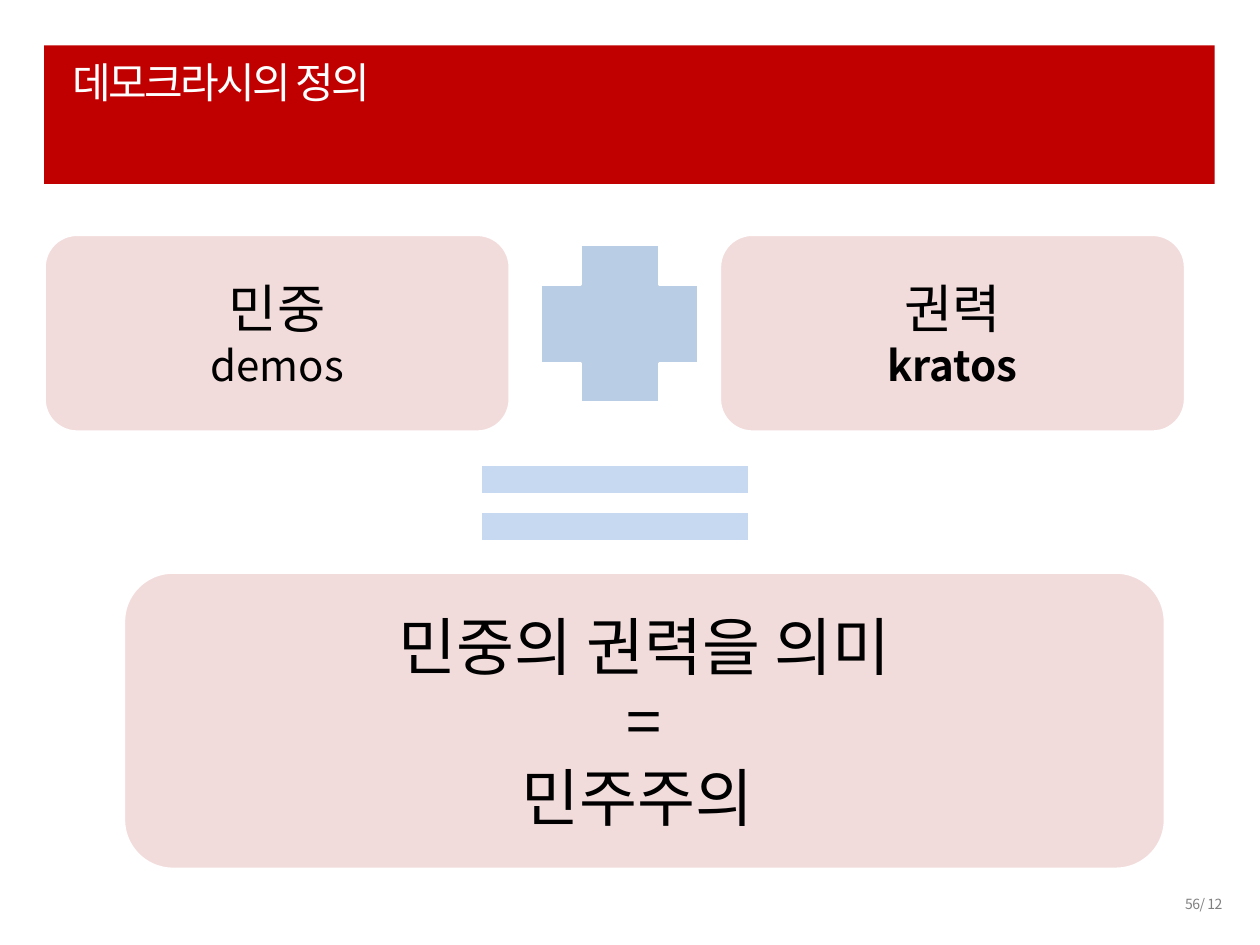
from pptx import Presentation
from pptx.dml.color import RGBColor
from pptx.enum.shapes import MSO_SHAPE as Shape
from pptx.enum.text import MSO_ANCHOR as Anchor, PP_ALIGN as Align
from pptx.oxml.ns import qn
from pptx.util import Inches, Pt
from lxml import etree

COLUMNS, ROWS = 100, 75
RED, PINK, BLUE, PALE_BLUE = "C00000", "F2DCDB", "B9CDE5", "C6D9F1"
WHITE, BLACK, GRAY = "FFFFFF", "000000", "808080"


def color(value):
    return RGBColor.from_string(value)


class SlideBuilder:
    """Places elements on a grid of COLUMNS by ROWS; a box is left, top, width, height."""

    font_name = "Noto Sans CJK KR"
    outline_width = Pt(2)

    def __init__(self, presentation):
        self.column = presentation.slide_width / COLUMNS
        self.row = presentation.slide_height / ROWS
        self.slide = presentation.slides.add_slide(presentation.slide_layouts[6])

    def place(self, box):
        left, top, width, height = box
        return [round(length) for length in (left * self.column, top * self.row,
                                             width * self.column, height * self.row)]

    def add_lines(self, shape, lines, text_color, align, anchor, spacing=0):
        """Fill the shape with one paragraph per (text, font format) pair."""
        frame = shape.text_frame
        frame.word_wrap = True
        frame.vertical_anchor = anchor
        for index, (text, font_format) in enumerate(lines):
            paragraph = frame.paragraphs[0] if index == 0 else frame.add_paragraph()
            paragraph.alignment = align
            run = paragraph.add_run()
            run.text = text
            for name, value in {"name": self.font_name, **font_format}.items():
                setattr(run.font, name, value)
            run.font.color.rgb = color(text_color)
            properties = run._r.get_or_add_rPr()
            etree.SubElement(properties, qn("a:ea"), typeface=self.font_name)
            if spacing:
                properties.set("spc", str(round(spacing * 100)))

    def shape(self, kind, box, fill, outline=WHITE, adjustments=()):
        shape = self.slide.shapes.add_shape(kind, *self.place(box))
        shape.shadow.inherit = False
        shape.fill.solid()
        shape.fill.fore_color.rgb = color(fill)
        if outline:
            shape.line.color.rgb = color(outline)
            shape.line.width = self.outline_width
        else:
            shape.line.fill.background()
        for index, value in enumerate(adjustments):
            shape.adjustments[index] = value
        return shape

    def card(self, box, lines):
        card = self.shape(Shape.ROUNDED_RECTANGLE, box, PINK)
        self.add_lines(card, lines, BLACK, Align.CENTER, Anchor.MIDDLE)

    def text(self, box, text, size, text_color, align, spacing):
        text_box = self.slide.shapes.add_textbox(*self.place(box))
        self.add_lines(text_box, [(text, {"size": Pt(size)})], text_color, align,
                       Anchor.TOP, spacing)


def main():
    presentation = Presentation()
    presentation.slide_width, presentation.slide_height = Inches(10), Inches(7.5)
    builder = SlideBuilder(presentation)

    builder.shape(Shape.RECTANGLE, (3.5, 3.6, 92.9, 11), RED, outline=None)
    builder.text((80.7, 70.6, 17.3, 2.4), "56/ 12", 8, GRAY, Align.RIGHT, -0.3)
    builder.text((4.8, 4, 90, 11), "데모크라시의 정의", 24, WHITE, Align.LEFT, -1.5)

    terms = [("민중", "demos", False), ("권력", "kratos", True)]
    for index, (korean, greek, bold) in enumerate(terms):
        builder.card((3.5 + index * 53.6, 18.6, 37, 15.7),
                     [(korean, {"size": Pt(30)}), (greek, {"size": Pt(24), "bold": bold})])
    builder.shape(Shape.CROSS, (42.9, 19.4, 12.6, 12.6), BLUE)

    meaning = ["민중의 권력을 의미", "=", "민주주의 "]
    builder.card((9.8, 45.4, 82.7, 23.6), [(line, {"size": Pt(36)}) for line in meaning])
    builder.shape(Shape.MATH_EQUAL, (34.3, 34.4, 29.1, 11), PALE_BLUE, adjustments=(0.22, 0.12))

    presentation.save("out.pptx")


if __name__ == "__main__":
    main()
